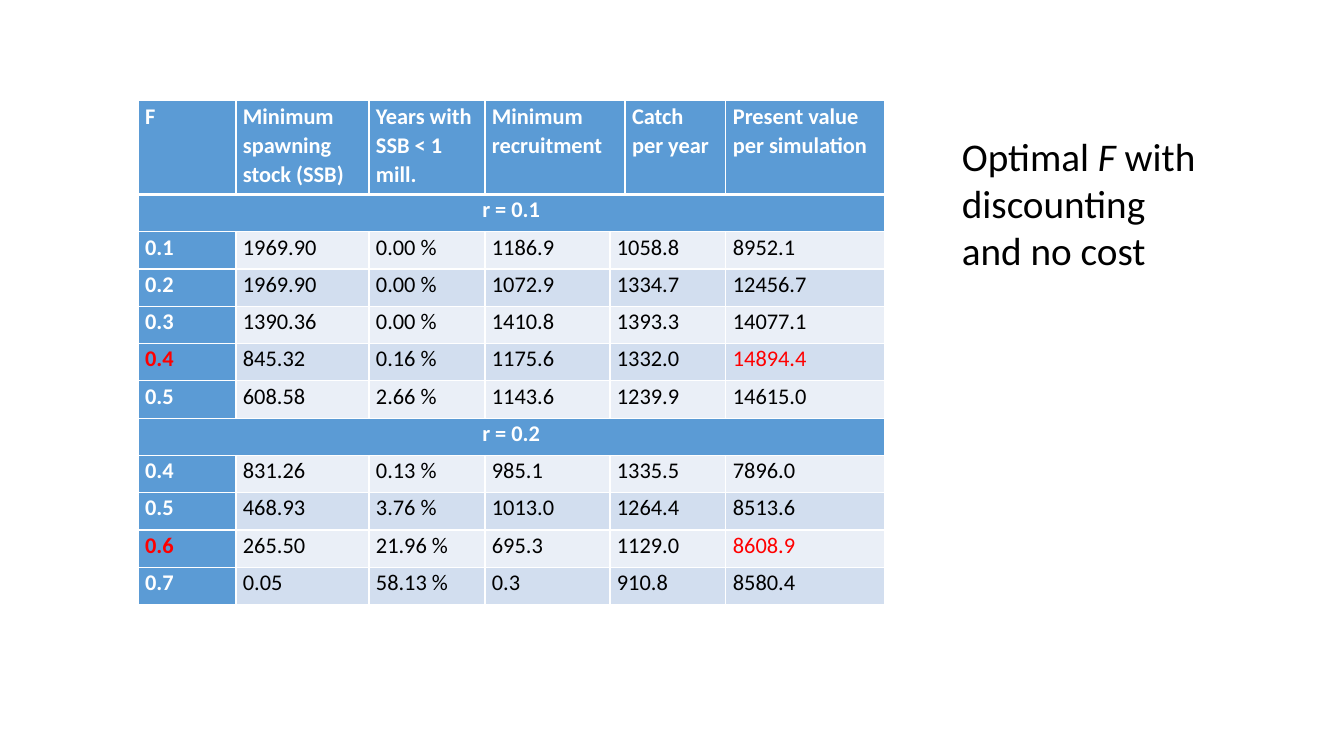
from dataclasses import dataclass

from lxml.etree import SubElement
from pptx import Presentation
from pptx.dml.color import RGBColor
from pptx.enum.text import MSO_ANCHOR, MSO_AUTO_SIZE, PP_ALIGN
from pptx.oxml.ns import qn
from pptx.util import Inches, Pt

CAPTION = [
    [("Optimal ", False), ("F ", True), ("with", False)],
    [("discounting", False)],
    [("and no cost", False)],
]
HEADINGS = [
    ["F"],
    ["Minimum", "spawning", "stock (SSB)"],
    ["Years with SSB < 1 mill."],
    ["Minimum", "recruitment"],
    ["Catch", "per year"],
    ["Present value per simulation"],
]
# Discount rate, optimal F, simulation results
SECTIONS = [
    ("r = 0.1", "0.4", [
        ("0.1", "1969.90", "0.00 %", "1186.9", "1058.8", "8952.1"),
        ("0.2", "1969.90", "0.00 %", "1072.9", "1334.7", "12456.7"),
        ("0.3", "1390.36", "0.00 %", "1410.8", "1393.3", "14077.1"),
        ("0.4", "845.32", "0.16 %", "1175.6", "1332.0", "14894.4"),
        ("0.5", "608.58", "2.66 %", "1143.6", "1239.9", "14615.0"),
    ]),
    ("r = 0.2", "0.6", [
        ("0.4", "831.26", "0.13 %", "985.1", "1335.5", "7896.0"),
        ("0.5", "468.93", "3.76 %", "1013.0", "1264.4", "8513.6"),
        ("0.6", "265.50", "21.96 %", "695.3", "1129.0", "8608.9"),
        ("0.7", "0.05", "58.13 %", "0.3", "910.8", "8580.4"),
    ]),
]

SLIDE_SIZE = (13.33, 7.5)
TABLE_AT = (1.37, 1.0)
CAPTION_BOX = (9.44, 1.26, 2.55, 1.51)
COLUMN_WIDTHS = (0.97, 1.32, 1.15, 1.24, 0.15, 1.0, 1.57)
HEADING_HEIGHT, ROW_HEIGHT = 0.93, 0.37
CELL_MARGIN = 0.07
# The narrow fifth column belongs to recruitment in the heading, to catch below it
HEADING_SPANS = (1, 1, 1, 2, 1, 1)
RESULT_SPANS = (1, 1, 1, 1, 2, 1)


@dataclass(frozen=True)
class Theme:
    font: str = "Calibri"
    caption_size: int = 28
    table_size: int = 16
    line_spacing: float = 1.07
    thin: int = 1
    thick: int = 3
    white: str = "FFFFFF"
    text: str = "000000"
    optimum: str = "FF0000"
    accent: str = "5B9BD5"
    bands: tuple = ("EAEFF7", "D2DEEF")


THEME = Theme()


def add_run(paragraph, text, size, color, bold=False, italic=False):
    run = paragraph.add_run()
    run.text = text
    font = run.font
    font.name, font.size = THEME.font, Pt(size)
    font.bold, font.italic = bold, italic
    font.color.rgb = RGBColor.from_string(color)


def next_paragraph(text_frame, index):
    return text_frame.paragraphs[0] if index == 0 else text_frame.add_paragraph()


def add_borders(cell, top, bottom):
    properties = cell._tc.get_or_add_tcPr()
    widths = {"L": THEME.thin, "R": THEME.thin, "T": top, "B": bottom}
    for side, width in widths.items():
        line = SubElement(properties, qn(f"a:ln{side}"), w=str(Pt(width)))
        fill = SubElement(line, qn("a:solidFill"))
        SubElement(fill, qn("a:srgbClr"), val=THEME.white)


def fill_cell(cell, lines, fill, color, bold, align=PP_ALIGN.LEFT):
    cell.fill.solid()
    cell.fill.fore_color.rgb = RGBColor.from_string(fill)
    cell.margin_left = cell.margin_right = Inches(CELL_MARGIN)
    cell.margin_top = cell.margin_bottom = 0
    for index, line in enumerate(lines):
        paragraph = next_paragraph(cell.text_frame, index)
        paragraph.alignment = align
        paragraph.line_spacing = THEME.line_spacing
        add_run(paragraph, line, THEME.table_size, color, bold)


def spanned_cells(table, row, spans):
    """Merge one row by its spans and return the leading cells."""
    cells, column = [], 0
    for span in spans:
        cell = table.cell(row, column)
        if span > 1:
            cell.merge(table.cell(row, column + span - 1))
        cells.append(cell)
        column += span
    return cells


def fill_result_row(table, row, values, band, is_optimum):
    cells = spanned_cells(table, row, RESULT_SPANS)
    last = len(values) - 1
    for index, (cell, value) in enumerate(zip(cells, values)):
        is_label = index == 0
        color = THEME.white if is_label else THEME.text
        if is_optimum and index in (0, last):
            color = THEME.optimum
        fill_cell(cell, [value], THEME.accent if is_label else band, color, is_label)


def add_results_table(slide):
    row_count = 1 + sum(1 + len(results) for _, _, results in SECTIONS)
    heights = [HEADING_HEIGHT] + [ROW_HEIGHT] * (row_count - 1)
    left, top, width, height = map(
        Inches, (*TABLE_AT, sum(COLUMN_WIDTHS), sum(heights)))
    table = slide.shapes.add_table(
        row_count, len(COLUMN_WIDTHS), left, top, width, height).table
    table.first_col = True
    for column, column_width in zip(table.columns, COLUMN_WIDTHS):
        column.width = Inches(column_width)
    for index, row_height in enumerate(heights):
        table.rows[index].height = Inches(row_height)
        for cell in table.rows[index].cells:
            add_borders(cell, THEME.thick if index == 1 else THEME.thin,
                        THEME.thick if index == 0 else THEME.thin)

    for cell, lines in zip(spanned_cells(table, 0, HEADING_SPANS), HEADINGS):
        fill_cell(cell, lines, THEME.accent, THEME.white, True)
    row = 1
    for rate, optimal_f, results in SECTIONS:
        rate_cell, = spanned_cells(table, row, (len(COLUMN_WIDTHS),))
        fill_cell(rate_cell, [rate], THEME.accent, THEME.white, True, PP_ALIGN.CENTER)
        for index, values in enumerate(results):
            fill_result_row(table, row + 1 + index, values,
                            THEME.bands[index % 2], values[0] == optimal_f)
        row += 1 + len(results)


def add_caption(slide):
    title = slide.shapes.title
    title.left, title.top, title.width, title.height = map(Inches, CAPTION_BOX)
    text_frame = title.text_frame
    text_frame.word_wrap = False
    text_frame.auto_size = MSO_AUTO_SIZE.SHAPE_TO_FIT_TEXT
    text_frame.vertical_anchor = MSO_ANCHOR.TOP
    for index, runs in enumerate(CAPTION):
        paragraph = next_paragraph(text_frame, index)
        paragraph.alignment = PP_ALIGN.LEFT
        for text, italic in runs:
            add_run(paragraph, text, THEME.caption_size, THEME.text, italic=italic)


def main():
    presentation = Presentation()
    presentation.slide_width, presentation.slide_height = map(Inches, SLIDE_SIZE)
    title_only = presentation.slide_layouts[5]
    slide = presentation.slides.add_slide(title_only)
    add_results_table(slide)
    add_caption(slide)
    presentation.save("out.pptx")


if __name__ == "__main__":
    main()
